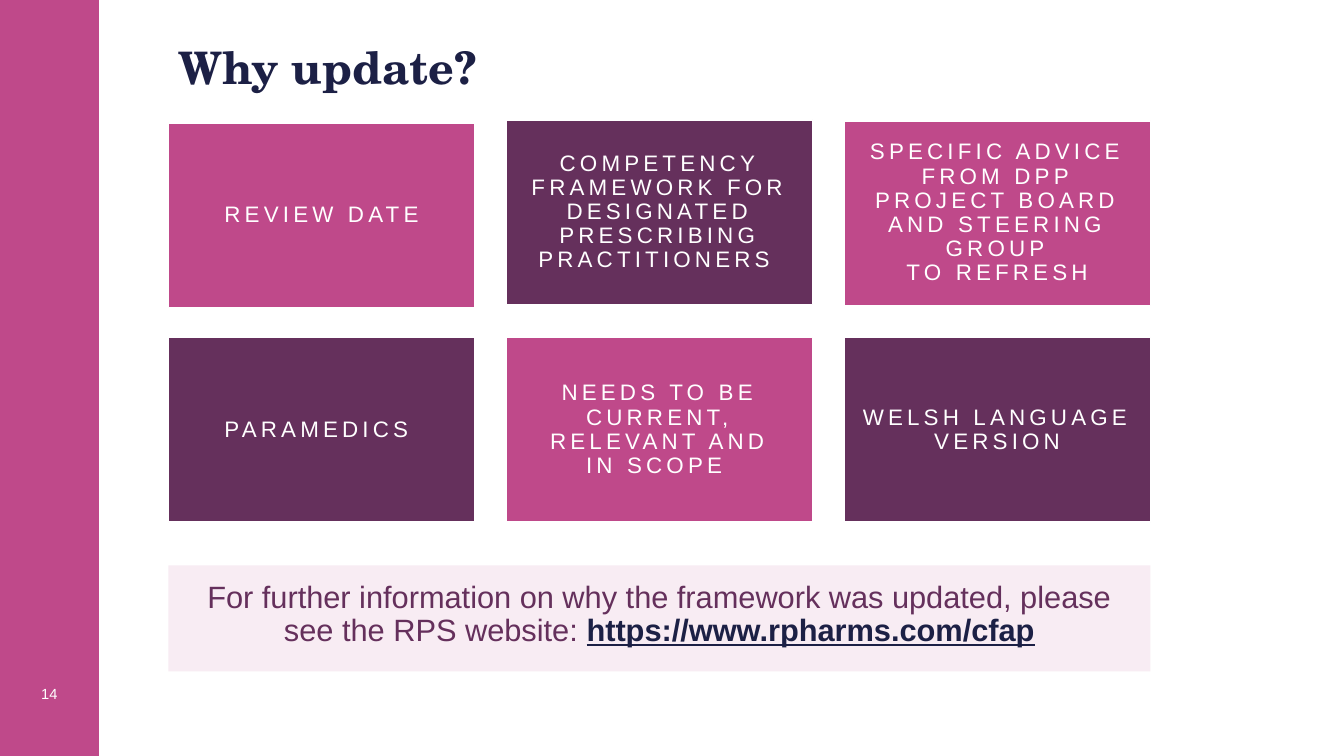
import pptx
import pptx.util
import pptx.dml.color
import pptx.enum.shapes
import pptx.enum.text
import pptx.oxml.ns
import lxml.etree

PINK, PLUM, NAVY, WHITE = "BF498A", "65305C", "1C2045", "FFFFFF"
TITLE = "Why update?"
PAGE_NUMBER = "14"
# Each card: text, and how far it sits above its grid row
CARDS = [
    [("REVIEW DATE", 0),
     ("COMPETENCY FRAMEWORK FOR DESIGNATED\nPRESCRIBING PRACTITIONERS ", 0.03),
     ("SPECIFIC ADVICE FROM DPP PROJECT BOARD\nAND STEERING GROUP\nTO REFRESH", 0.02)],
    [("PARAMEDICS ", 0),
     ("NEEDS TO BE CURRENT, RELEVANT AND\nIN SCOPE ", 0),
     ("WELSH LANGUAGE VERSION", 0)],
]
INFO = "For further information on why the framework was updated, please see the RPS website: "
ADDRESS = "https://www.rpharms.com/cfap"

WIDTH, HEIGHT = 13.33, 7.5
LEFT, CONTENT_WIDTH = 1.67, 9.74
CARD_WIDTH, CARD_HEIGHT = 3.04, 1.83
COLUMN_STEP = (CONTENT_WIDTH - CARD_WIDTH) / 2
GRID_TOP, ROW_STEP = 1.22, 2.13

ANCHOR = pptx.enum.text.MSO_ANCHOR
ALIGN = pptx.enum.text.PP_ALIGN


def inches(*lengths):
    return [pptx.util.Inches(length) for length in lengths]


def colour(value):
    return pptx.dml.color.RGBColor.from_string(value)


def add_text(para, text, size, color, font="Arial", bold=False, underline=False, spacing=0):
    """Add text to a paragraph, with a line break at each newline."""
    for index, line in enumerate(text.split("\n")):
        if index:
            para.add_line_break()
        span = para.add_run()
        span.text = line
        span.font.name = font
        span.font.size = pptx.util.Pt(size)
        span.font.bold = bold
        span.font.underline = underline
        span.font.color.rgb = colour(color)
        if spacing:
            span.font._element.set("spc", str(spacing * 100))


def format_frame(box, align=ALIGN.CENTER, anchor=ANCHOR.TOP, inset=None, line_spacing=0.9):
    """Set up the text frame and return its first paragraph."""
    frame = box.text_frame
    frame.word_wrap = True
    frame.auto_size = pptx.enum.text.MSO_AUTO_SIZE.NONE
    frame.vertical_anchor = anchor
    if inset is not None:
        frame.margin_left, frame.margin_top, frame.margin_right, frame.margin_bottom = inches(*[inset] * 4)
    para = frame.paragraphs[0]
    para.alignment = align
    para.line_spacing = line_spacing
    return para


def add_rectangle(page, left, top, width, height, fill, line=None, opacity=100):
    box = page.shapes.add_shape(pptx.enum.shapes.MSO_SHAPE.RECTANGLE, *inches(left, top, width, height))
    box.shadow.inherit = False
    box.fill.solid()
    box.fill.fore_color.rgb = colour(fill)
    if opacity < 100:
        tint = box._element.spPr.find(".//" + pptx.oxml.ns.qn("a:srgbClr"))
        lxml.etree.SubElement(tint, pptx.oxml.ns.qn("a:alpha")).set("val", str(opacity * 1000))
    if line:
        box.line.color.rgb = colour(line)
        box.line.width = pptx.util.Pt(1)
    else:
        box.line.fill.background()
    return box


def main():
    deck = pptx.Presentation()
    deck.slide_width, deck.slide_height = inches(WIDTH, HEIGHT)
    page = deck.slides.add_slide(deck.slide_layouts[5])

    title = page.shapes.title
    title.left, title.top, title.width, title.height = inches(LEFT, 0.4, CONTENT_WIDTH, 0.43)
    add_text(format_frame(title, align=ALIGN.LEFT), TITLE, 32, NAVY, font="TeX Gyre Schola", bold=True)

    add_rectangle(page, 0, 0, 0.98, HEIGHT, PINK)
    number = page.shapes.add_textbox(*inches(-0.01, 6.74, 1, 0.29))
    add_text(format_frame(number, line_spacing=1.0), PAGE_NUMBER, 10.5, WHITE)

    for row, cards in enumerate(CARDS):
        for column, (text, lift) in enumerate(cards):
            fill = (PINK, PLUM)[(row + column) % 2]
            card = add_rectangle(page, LEFT + column * COLUMN_STEP, GRID_TOP + row * ROW_STEP - lift,
                                 CARD_WIDTH, CARD_HEIGHT, fill, line=WHITE)
            para = format_frame(card, anchor=ANCHOR.MIDDLE, inset=0.07)
            add_text(para, text, 16, WHITE, spacing=3)

    banner = add_rectangle(page, LEFT, 5.61, CONTENT_WIDTH, 1.05, PINK, opacity=10)
    para = format_frame(banner, inset=0.16)
    add_text(para, INFO, 22, PLUM)
    add_text(para, ADDRESS, 22, NAVY, bold=True, underline=True)

    deck.save("out.pptx")


if __name__ == "__main__":
    main()
